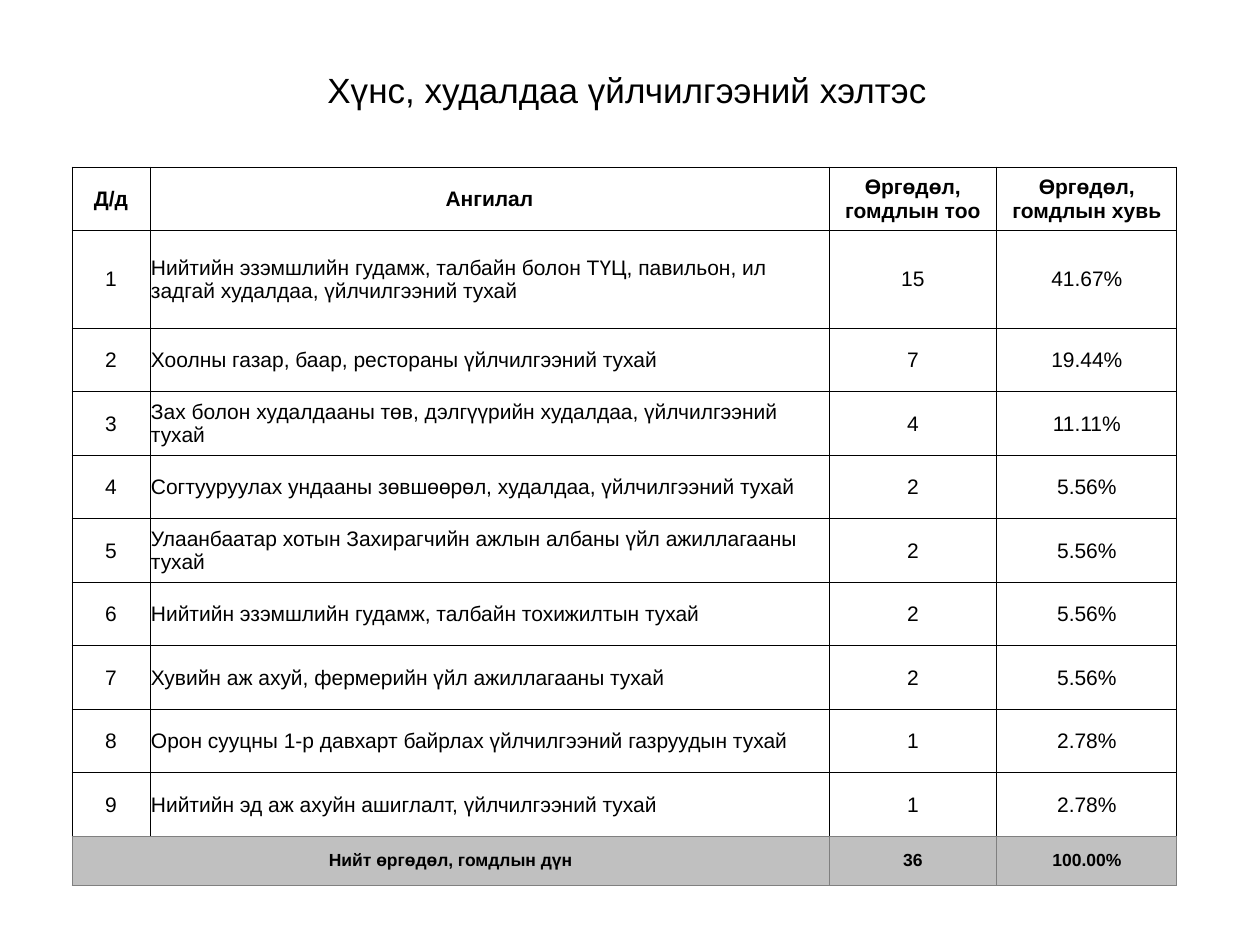
"""Build a slide with a table of complaints by category."""
from lxml import etree
from pptx import Presentation
from pptx import util as u
from pptx.dml.color import RGBColor
from pptx.enum import text
from pptx.oxml import ns

BLACK = RGBColor(0x00, 0x00, 0x00)
WHITE = RGBColor(0xFF, 0xFF, 0xFF)
GRAY = RGBColor(0x80, 0x80, 0x80)
SILVER = RGBColor(0xC0, 0xC0, 0xC0)

PX_PER_INCH = 126
LEFT, TOP = 72, 167
COL_WIDTHS = [78, 679, 168, 180]
HEADER_H, FIRST_H, OTHERS_H, TOTAL_H = 63, 98, 508, 49

TITLE = "Хүнс, худалдаа үйлчилгээний хэлтэс "
HEADER = ["Д/д", "Ангилал", "Өргөдөл, гомдлын тоо", "Өргөдөл, гомдлын хувь"]
CATEGORIES = [
    ("Нийтийн эзэмшлийн гудамж, талбайн болон ТҮЦ, павильон, ил задгай "
     "худалдаа, үйлчилгээний тухай", "15", "41.67%"),
    ("Хоолны газар, баар, рестораны үйлчилгээний тухай", "7", "19.44%"),
    ("Зах болон худалдааны төв, дэлгүүрийн худалдаа, үйлчилгээний тухай", "4", "11.11%"),
    ("Согтууруулах ундааны зөвшөөрөл, худалдаа, үйлчилгээний тухай", "2", "5.56%"),
    ("Улаанбаатар хотын Захирагчийн ажлын албаны үйл ажиллагааны тухай", "2", "5.56%"),
    ("Нийтийн эзэмшлийн гудамж, талбайн тохижилтын тухай", "2", "5.56%"),
    ("Хувийн аж ахуй, фермерийн үйл ажиллагааны тухай", "2", "5.56%"),
    ("Орон сууцны 1-р давхарт байрлах үйлчилгээний газруудын тухай", "1", "2.78%"),
    ("Нийтийн эд аж ахуйн ашиглалт, үйлчилгээний тухай", "1", "2.78%"),
]
TOTAL = ["Нийт өргөдөл, гомдлын дүн", "", "36", "100.00%"]


def px(n):
    return u.Emu(round(n * 914400 / PX_PER_INCH))


def set_attrs(obj, values):
    for name, value in values.items():
        setattr(obj, name, value)


def write(tf, content, align, size, bold=False):
    p = tf.paragraphs[0]
    p.alignment = align
    r = p.add_run()
    r.text = content
    set_attrs(r.font, {"name": "Arial", "size": u.Pt(size), "bold": bold})
    r.font.color.rgb = BLACK
    return p


def add_title(s):
    sp = s.shapes.title
    set_attrs(sp, {"left": px(89), "top": px(54), "width": px(1086), "height": px(77)})
    set_attrs(sp.text_frame, {"word_wrap": True, "vertical_anchor": text.MSO_ANCHOR.MIDDLE})
    write(sp.text_frame, TITLE, text.PP_ALIGN.CENTER, 20).line_spacing = 0.9


def set_borders(cell, color, bottom):
    pr = cell._tc.get_or_add_tcPr()
    for i, side in enumerate(("lnL", "lnR", "lnT", "lnB")):
        ln = etree.Element(ns.qn(f"a:{side}"), w=str(u.Pt(0.5)))
        fill = etree.SubElement(ln, ns.qn("a:solidFill"))
        rgb = bottom if side == "lnB" else color
        etree.SubElement(fill, ns.qn("a:srgbClr"), val=str(rgb))
        pr.insert(i, ln)


def format_cell(cell, content, align, size, bold, fill, line, bottom):
    set_attrs(cell, {"margin_left": px(1), "margin_right": px(1), "margin_top": px(1),
                     "margin_bottom": 0, "vertical_anchor": text.MSO_ANCHOR.MIDDLE})
    cell.fill.solid()
    cell.fill.fore_color.rgb = fill
    set_borders(cell, line, bottom)
    if content:
        write(cell.text_frame, content, align, size, bold)


def add_complaints_table(s):
    body = [(str(n), *row) for n, row in enumerate(CATEGORIES, 1)]
    rows = [HEADER, *body, TOTAL]
    others = len(CATEGORIES) - 1
    heights = [HEADER_H, FIRST_H] + [OTHERS_H / others] * others + [TOTAL_H]
    frame = s.shapes.add_table(len(rows), len(HEADER), px(LEFT), px(TOP),
                               px(sum(COL_WIDTHS)), px(sum(heights)))
    table = frame.table
    set_attrs(table, {"first_row": False, "horz_banding": False})
    for col, width in zip(table.columns, COL_WIDTHS):
        col.width = px(width)
    last = len(rows) - 1
    for i, (row, height) in enumerate(zip(rows, heights)):
        table.rows[i].height = px(height)
        total = i == last
        for j, content in enumerate(row):
            named = j == 1 and 0 < i < last
            format_cell(table.cell(i, j), content,
                        align=text.PP_ALIGN.LEFT if named else text.PP_ALIGN.CENTER,
                        size=10 if total else 12,
                        bold=i in (0, last),
                        fill=SILVER if total else WHITE,
                        line=GRAY if total else BLACK,
                        bottom=GRAY if i >= last - 1 else BLACK)
    table.cell(last, 0).merge(table.cell(last, 1))


def main():
    prs = Presentation()
    set_attrs(prs, {"slide_width": px(1260), "slide_height": px(945)})
    s = prs.slides.add_slide(prs.slide_layouts[5])
    add_title(s)
    add_complaints_table(s)
    prs.save("out.pptx")


if __name__ == "__main__":
    main()
